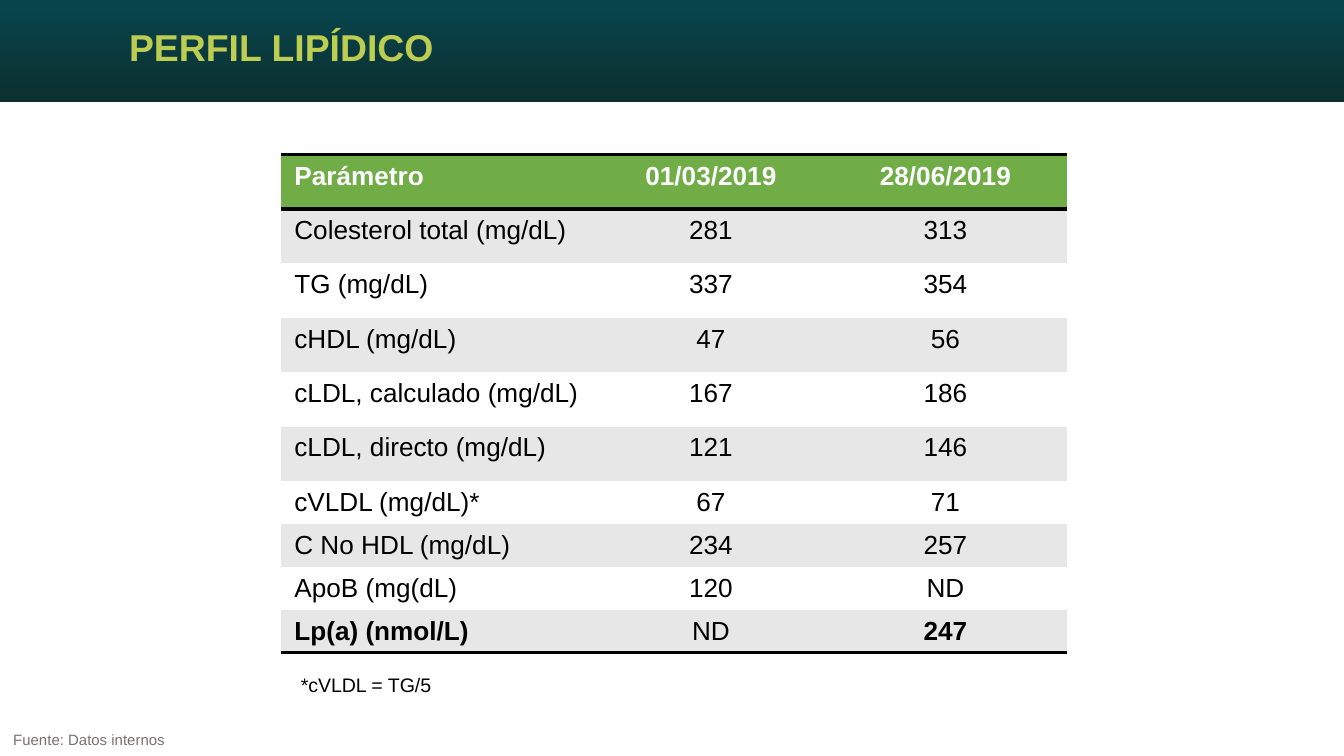
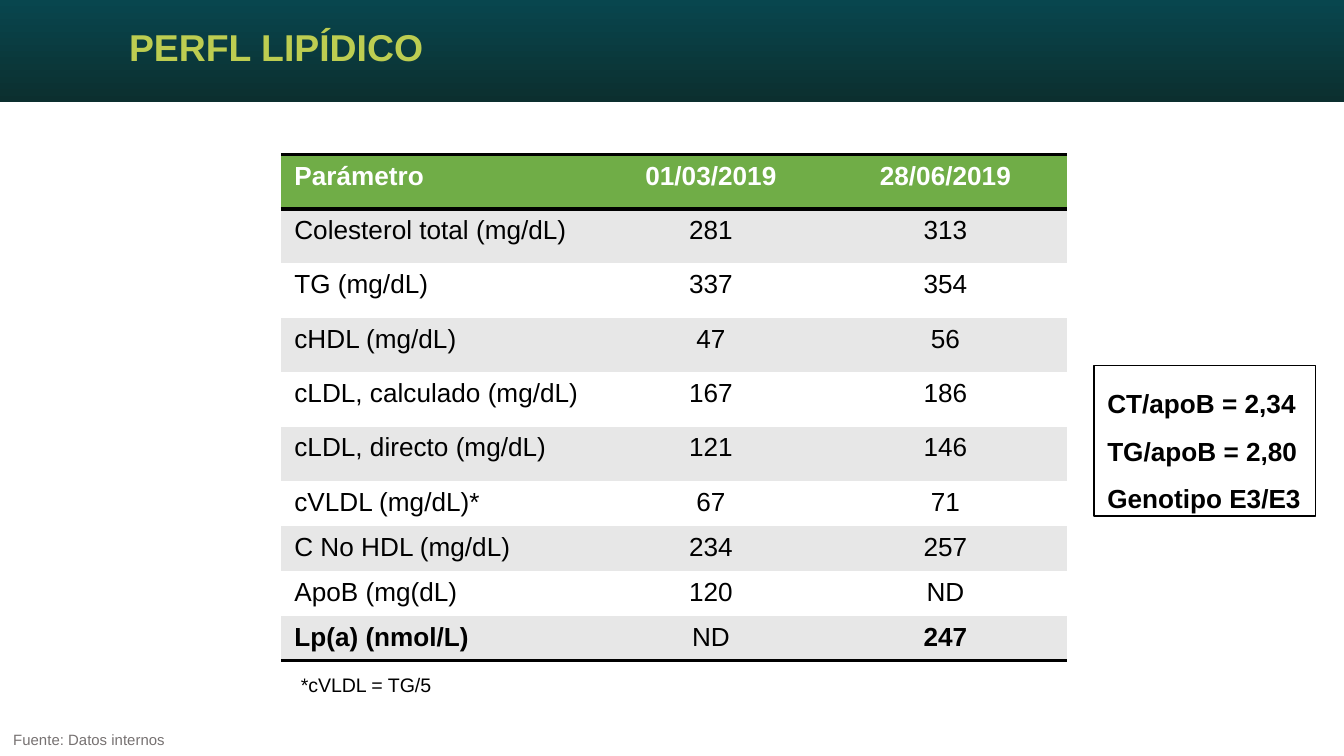
from lxml import etree
from pptx import Presentation
from pptx.dml.color import RGBColor
from pptx.enum.shapes import MSO_SHAPE
from pptx.enum.text import MSO_ANCHOR, MSO_AUTO_SIZE, PP_ALIGN
from pptx.oxml import parse_xml
from pptx.oxml.ns import nsdecls, qn
from pptx.util import Inches, Pt

RECT = MSO_SHAPE.RECTANGLE
MIDDLE = MSO_ANCHOR.MIDDLE
GROW, FIXED = MSO_AUTO_SIZE.SHAPE_TO_FIT_TEXT, MSO_AUTO_SIZE.NONE
LEFT, CENTER = PP_ALIGN.LEFT, PP_ALIGN.CENTER

WIDTH = 10
HEIGHT = WIDTH * 9 / 16
FONT = "Arial"
COLORS = {
    "teal": "08464E", "deep": "0C2F2F", "lime": "BDCD51", "green": "70AD47",
    "gray": "E7E7E7", "white": "FFFFFF", "black": "000000", "muted": "767171",
}
PLAIN_STYLE = "{2D5ABB26-0587-4C30-8999-92F81FD0307C}"

COLS = [2.36, 1.68, 1.81]
LIPIDS = [
    ("Parámetro", "01/03/2019", "28/06/2019"),
    ("Colesterol total (mg/dL)", "281", "313"),
    ("TG (mg/dL)", "337", "354"),
    ("cHDL (mg/dL)", "47", "56"),
    ("cLDL, calculado (mg/dL)", "167", "186"),
    ("cLDL, directo (mg/dL)", "121", "146"),
    ("cVLDL (mg/dL)*", "67", "71"),
    ("C No HDL (mg/dL)", "234", "257"),
    ("ApoB (mg(dL)", "120", "ND"),
    ("Lp(a) (nmol/L)", "ND", "247"),
]
LAST = len(LIPIDS) - 1
TALL_ROWS = 6
SHORT_ROWS = len(LIPIDS) - TALL_ROWS
TALL = 2.43 / TALL_ROWS
RATIOS = ["CT/apoB = 2,34", "TG/apoB = 2,80", "Genotipo E3/E3"]


def rgb(name):
    return RGBColor.from_string(COLORS[name])


def write(para, text, size, color, bold=False):
    run = para.add_run()
    run.text = text
    font = run.font
    font.name, font.size, font.bold = FONT, Pt(size), bold
    font.color.rgb = rgb(color)


def place(shape, box):
    shape.left, shape.top, shape.width, shape.height = map(Inches, box)


def add_band(slide, box):
    """Draw the header band and move it to the layout, behind every title."""
    band = slide.shapes.add_shape(RECT, *map(Inches, box))
    band.shadow.inherit = False
    band.line.fill.background()
    band.fill.gradient()
    band.fill.gradient_angle = 270
    for stop, name in zip(band.fill.gradient_stops, ("teal", "deep")):
        stop.color.rgb = rgb(name)
    band._element.nvSpPr.cNvPr.set("id", "99")
    slide.slide_layout.shapes._spTree.insert(2, band._element)


def add_title(slide, text, box):
    title = slide.shapes.title
    place(title, box)
    frame = title.text_frame
    frame.auto_size = FIXED
    frame.vertical_anchor = MIDDLE
    para = frame.paragraphs[0]
    para.alignment, para.line_spacing = LEFT, 0.9
    write(para, text, 20, "lime", True)


def add_text(slide, lines, box, size, color="black", bold=False,
             wrap=False, spacing=None):
    shape = slide.shapes.add_textbox(*map(Inches, box))
    frame = shape.text_frame
    frame.word_wrap, frame.auto_size = wrap, GROW
    for i, line in enumerate(lines):
        para = frame.add_paragraph() if i else frame.paragraphs[0]
        para.line_spacing = spacing
        write(para, line, size, color, bold)
    return shape


def add_rule(cell, tag):
    """Put a black 2 pt border on one side, ahead of the cell's fill."""
    line = parse_xml(f'<a:{tag} {nsdecls("a")} w="{Pt(2)}"/>')
    solid = etree.SubElement(line, qn("a:solidFill"))
    etree.SubElement(solid, qn("a:srgbClr"), val=COLORS["black"])
    cell._tc.get_or_add_tcPr().insert(0, line)


def fill_cell(cell, text, row, col):
    head = row == 0
    cell.fill.solid()
    cell.fill.fore_color.rgb = rgb(
        "green" if head else "gray" if row % 2 else "white")
    para = cell.text_frame.paragraphs[0]
    para.alignment = CENTER if col else LEFT
    bold = head or (row == LAST and col != 1)
    write(para, text, 14, "white" if head else "black", bold)
    if row in (0, LAST):
        add_rule(cell, "lnB")
    if head:
        add_rule(cell, "lnT")


def add_lipids(slide, left, top, rest):
    """Draw the lipid table; rest is the height its short rows share."""
    heights = [TALL] * TALL_ROWS + [rest / SHORT_ROWS] * SHORT_ROWS
    box = left, top, sum(COLS), sum(heights)
    frame = slide.shapes.add_table(len(LIPIDS), len(COLS), *map(Inches, box))
    table = frame.table
    table.first_row = table.horz_banding = False
    table._tbl.tblPr.find(qn("a:tableStyleId")).text = PLAIN_STYLE
    for col, width in zip(table.columns, COLS):
        col.width = Inches(width)
    for r, (height, texts) in enumerate(zip(heights, LIPIDS)):
        table.rows[r].height = Inches(height)
        for c, text in enumerate(texts):
            fill_cell(table.cell(r, c), text, r, c)


def add_ratios(slide, box):
    shape = add_text(slide, RATIOS, box, 14, bold=True, spacing=1.5)
    shape.line.color.rgb = rgb("black")
    shape.line.width = Pt(0.75)


def add_profile(deck, title, rest):
    slide = deck.slides.add_slide(deck.slide_layouts[5])
    add_title(slide, title, (0.86, 0, 7.55, 0.73))
    add_lipids(slide, 2.09, 1.15, rest)
    add_text(slide, ["*cVLDL = TG/5"], (2.14, 4.96, 1.24, 0.29), 10.5)
    add_text(slide, ["Fuente: Datos internos"], (0, 5.39, 2.25, 0.24), 8,
             "muted", wrap=True)
    return slide


def main():
    deck = Presentation()
    deck.slide_width, deck.slide_height = Inches(WIDTH), Inches(HEIGHT)
    first = add_profile(deck, "PERFIL LIPÍDICO", 1.28)
    add_band(first, (0, 0, WIDTH, 0.76))
    second = add_profile(deck, "PERFL LIPÍDICO", 1.34)
    add_ratios(second, (8.14, 2.72, 1.65, 1.12))
    deck.save("out.pptx")


if __name__ == "__main__":
    main()
